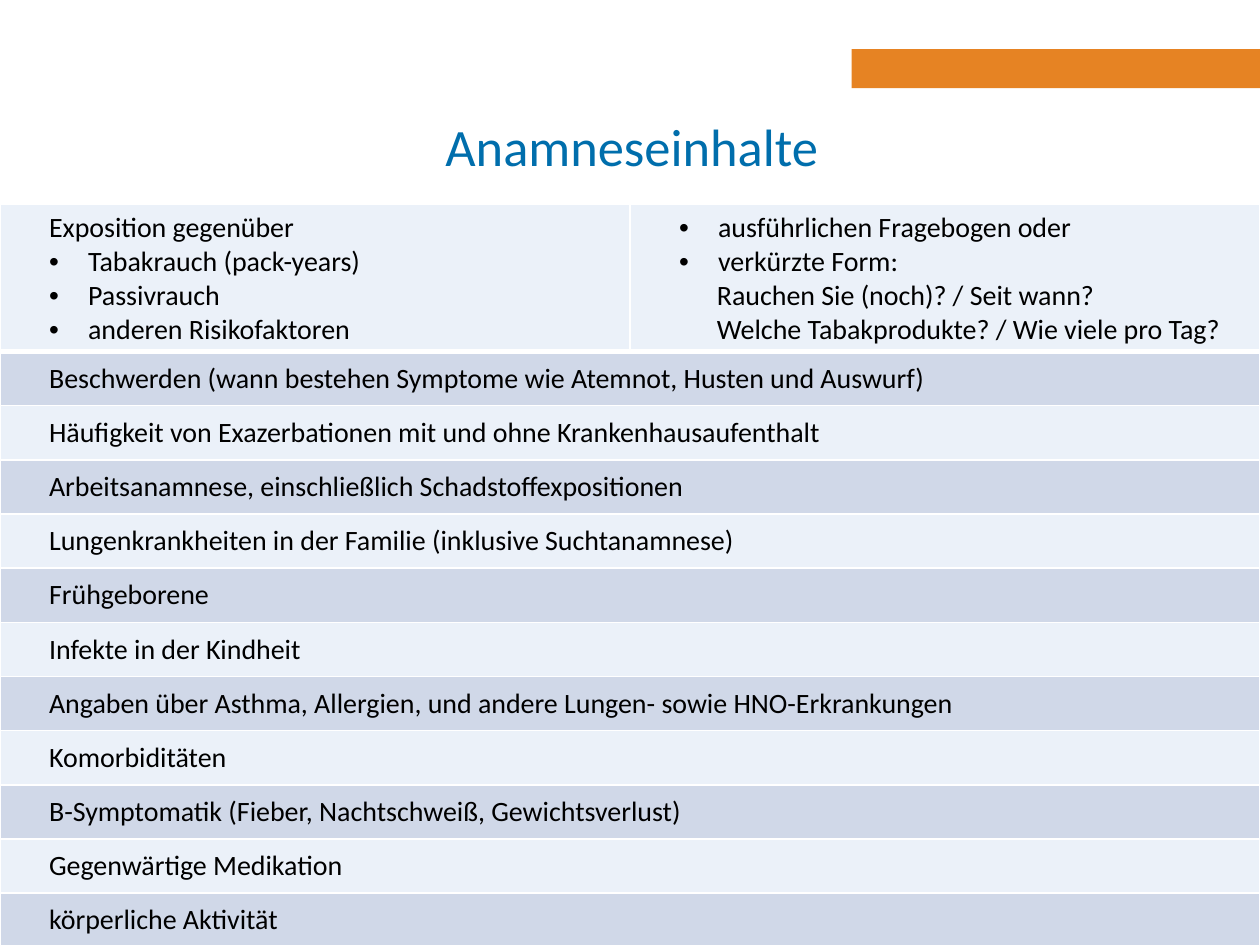
import pptx
import pptx.util
import pptx.dml.color
import pptx.enum.shapes
import pptx.enum.text
from lxml import etree
from pptx.oxml.ns import qn
from pptx.util import Inches

RGBColor = pptx.dml.color.RGBColor
WHITE = RGBColor(0xFF, 0xFF, 0xFF)
BLACK = RGBColor(0x00, 0x00, 0x00)
ORANGE = RGBColor(0xE6, 0x83, 0x23)
BLUE = RGBColor(0x00, 0x6E, 0xAC)
ROW_FILLS = (RGBColor(0xEB, 0xF1, 0xF9), RGBColor(0xD0, 0xD8, 0xE8))
FONT = "Calibri"
MIDDLE = pptx.enum.text.MSO_ANCHOR.MIDDLE

# Each line: text, style ("plain", "bullet" or "indented")
EXPOSURE = [
    ("Exposition gegenüber", "plain"),
    ("Tabakrauch (pack-years)", "bullet"),
    ("Passivrauch", "bullet"),
    ("anderen Risikofaktoren", "bullet"),
]
QUESTIONS = [
    ("ausführlichen Fragebogen oder", "bullet"),
    ("verkürzte Form:", "bullet"),
    ("Rauchen Sie (noch)? / Seit wann?", "indented"),
    ("Welche Tabakprodukte? / Wie viele pro Tag?", "indented"),
]
TOPICS = [
    "Beschwerden (wann bestehen Symptome wie Atemnot, Husten und Auswurf)",
    "Häufigkeit von Exazerbationen mit und ohne Krankenhausaufenthalt",
    "Arbeitsanamnese, einschließlich Schadstoffexpositionen",
    "Lungenkrankheiten in der Familie (inklusive Suchtanamnese)",
    "Frühgeborene",
    "Infekte in der Kindheit",
    "Angaben über Asthma, Allergien, und andere Lungen- sowie HNO-Erkrankungen",
    "Komorbiditäten",
    "B-Symptomatik (Fieber, Nachtschweiß, Gewichtsverlust)",
    "Gegenwärtige Medikation",
    "körperliche Aktivität",
]


def indent(para, left, first=0, bullet=None):
    """Set left and first-line indents in inches, with an optional bullet."""
    props = para._p.get_or_add_pPr()
    props.set("marL", str(Inches(left)))
    props.set("indent", str(Inches(first)))
    if bullet:
        etree.SubElement(props, qn("a:buFont")).set("typeface", "Arial")
        etree.SubElement(props, qn("a:buChar")).set("char", bullet)


def write(para, text, size=16, color=BLACK, style="plain", align=None):
    if style == "bullet":
        indent(para, 0.31, -0.31, "•")
    elif style == "indented":
        para.level = 1
        indent(para, 0.3)
    if align is not None:
        para.alignment = align
    span = para.add_run()
    span.text = text
    span.font.name = FONT
    span.font.size = pptx.util.Pt(size)
    span.font.color.rgb = color


def add_bar(page):
    bar = page.shapes.add_shape(
        pptx.enum.shapes.MSO_SHAPE.RECTANGLE,
        Inches(6.76), Inches(0.39), Inches(3.24), Inches(0.31))
    bar.shadow.inherit = False
    bar.fill.solid()
    bar.fill.fore_color.rgb = ORANGE
    bar.line.fill.background()


def add_title(page, text):
    box = page.shapes.add_textbox(Inches(1.48), Inches(0.69), Inches(7.07), Inches(0.93))
    box.text_frame.word_wrap = True
    box.text_frame.vertical_anchor = MIDDLE
    write(box.text_frame.paragraphs[0], text, size=30, color=BLUE,
          align=pptx.enum.text.PP_ALIGN.CENTER)


def add_borders(cell, **widths):
    """Draw white borders; widths in points are keyed by side L, R, T, B."""
    props = cell._tc.get_or_add_tcPr()
    for side, width in widths.items():
        line = etree.SubElement(props, qn(f"a:ln{side}"), w=str(pptx.util.Pt(width)))
        fill = etree.SubElement(line, qn("a:solidFill"))
        etree.SubElement(fill, qn("a:srgbClr"), val=str(WHITE))


def style_cell(cell, row):
    add_borders(cell, L=1, R=1, T=3 if row == 1 else 1, B=3 if row == 0 else 1)
    cell.fill.solid()
    cell.fill.fore_color.rgb = ROW_FILLS[row % 2]
    cell.vertical_anchor = MIDDLE
    cell.margin_left = Inches(0.39)


def fill_cell(cell, lines):
    frame = cell.text_frame
    for number, (text, style) in enumerate(lines):
        para = frame.add_paragraph() if number else frame.paragraphs[0]
        write(para, text, style=style)


def add_topic_table(page):
    rows = len(TOPICS) + 1
    table = page.shapes.add_table(
        rows, 2, Inches(0), Inches(1.62), Inches(10), Inches(5.88)).table
    for number, row in enumerate(table.rows):
        row.height = Inches(0.43 if number else 1.17)
        for cell in row.cells:
            style_cell(cell, number)
    fill_cell(table.cell(0, 0), EXPOSURE)
    fill_cell(table.cell(0, 1), QUESTIONS)
    for number, topic in enumerate(TOPICS, start=1):
        table.cell(number, 0).merge(table.cell(number, 1))
        fill_cell(table.cell(number, 0), [(topic, "plain")])


def main():
    deck = pptx.Presentation()
    deck.slide_width, deck.slide_height = Inches(10), Inches(7.5)
    page = deck.slides.add_slide(deck.slide_layouts[6])
    add_bar(page)
    add_title(page, "Anamneseinhalte")
    add_topic_table(page)
    deck.save("out.pptx")


if __name__ == "__main__":
    main()
